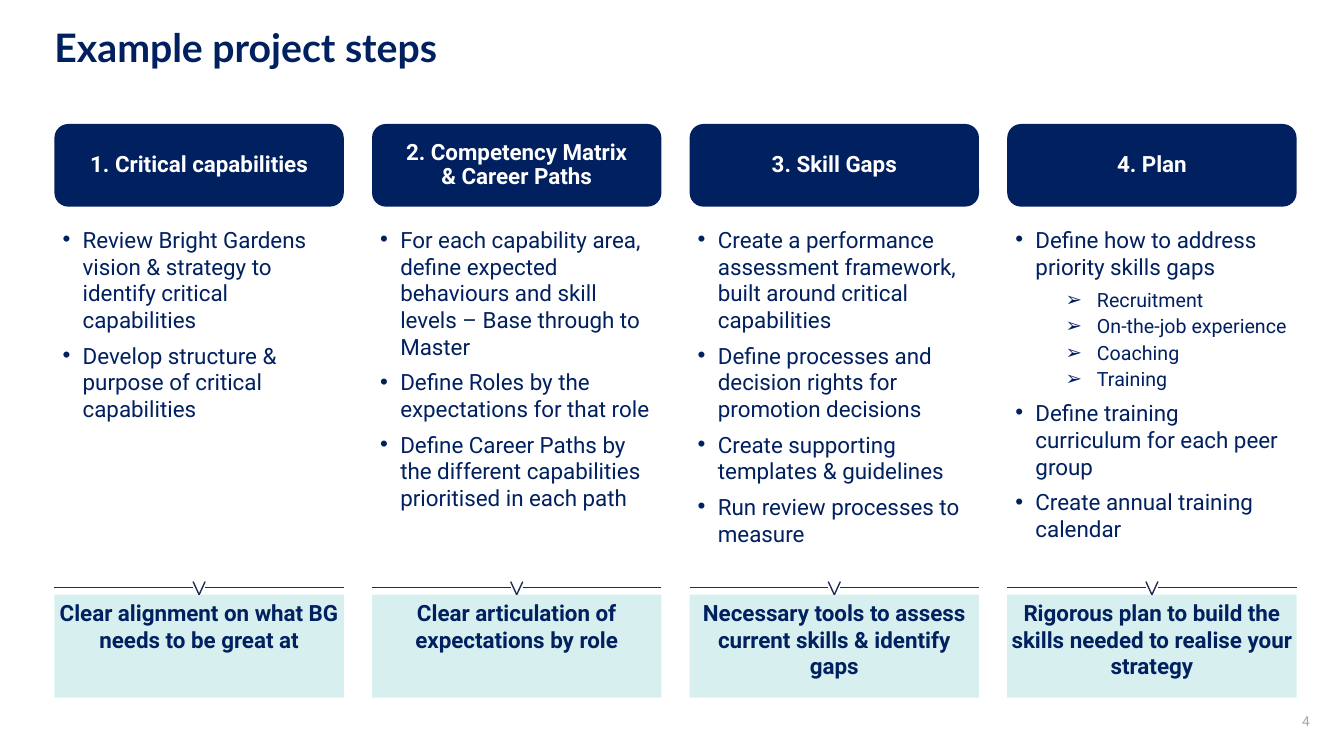
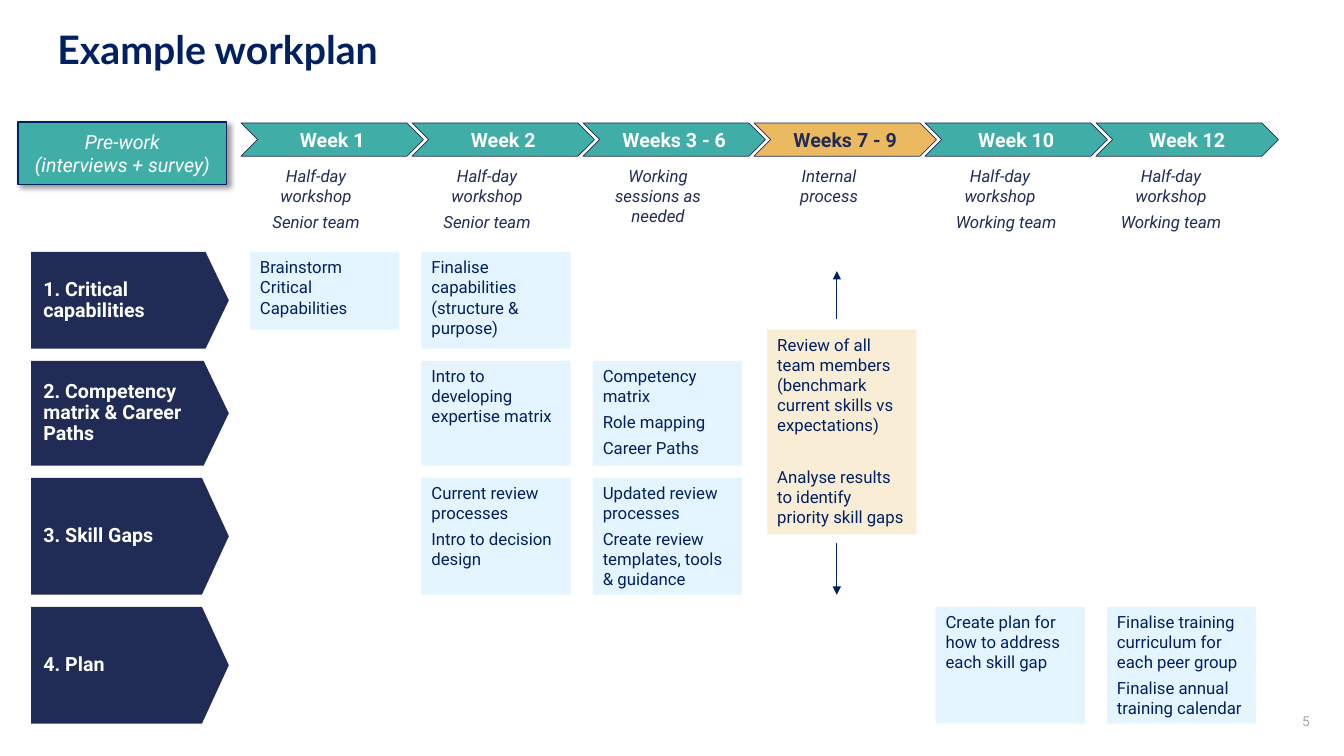
from dataclasses import dataclass
from typing import Any

from lxml.etree import SubElement
from pptx import Presentation
from pptx.dml.color import RGBColor
from pptx.enum.shapes import MSO_CONNECTOR, MSO_SHAPE
from pptx.enum.text import MSO_ANCHOR, MSO_AUTO_SIZE, PP_ALIGN
from pptx.oxml.ns import qn
from pptx.util import Inches, Pt

NAVY = RGBColor(0x00, 0x20, 0x60)
INK = RGBColor(0x21, 0x2C, 0x56)
TEAL = RGBColor(0x40, 0xAE, 0xA6)
MINT = RGBColor(0xD7, 0xF0, 0xEF)
SKY = RGBColor(0xE5, 0xF5, 0xFF)
AMBER = RGBColor(0xEB, 0xB9, 0x5F)
CREAM = RGBColor(0xFA, 0xED, 0xD6)
GREY = RGBColor(0xA6, 0xA6, 0xA6)
WHITE = RGBColor(0xFF, 0xFF, 0xFF)

COMPARISON_LAYOUT, TITLE_ONLY_LAYOUT = 4, 5

# Steps page: four equal columns
STEP_LEFT, STEP_PITCH, STEP_WIDTH = 0.54, 3.15, 2.87
RULE_TOP, NOTCH_HALF, OUTCOME_TOP = 5.83, 0.06, 5.9

# Workplan page: six week columns, four step rows
WEEK_LEFT, WEEK_PITCH, WEEK_WIDTH = 2.39, 8.48 / 5, 1.81
CARD_LEFT, CARD_PITCH, CARD_WIDTH = 2.48, 1.7, 1.48
CAPTION_WIDTH = 1.31
ROW_HEIGHTS = (0.96, 1.04, 1.16, 1.16)
ROW_TOP, ROW_GAP = 2.5, 0.12

Box = tuple[float, float, float, float]


@dataclass(frozen=True)
class TextStyle:
    size: float
    color: RGBColor
    bold: bool = False
    italic: bool = False
    name: str = "Roboto"
    align: PP_ALIGN = PP_ALIGN.LEFT
    anchor: MSO_ANCHOR = MSO_ANCHOR.MIDDLE
    line_spacing: float = 1.0
    before: float = 0
    insets: Box = (0.08, 0.08, 0.08, 0.08)


@dataclass(frozen=True)
class Bullet:
    text: str
    level: int = 0
    before: float = 6


@dataclass(frozen=True)
class Step:
    heading: str
    bullets: tuple[Bullet, ...]
    outcome: str


@dataclass(frozen=True)
class Week:
    label: str
    activity: str
    audience: str = ""
    audience_shift: float = 0
    fill: RGBColor = TEAL
    color: RGBColor = WHITE


@dataclass(frozen=True)
class Card:
    week: int
    row: int
    lines: tuple[str, ...]
    height: float | None = None


NONE = (0, 0, 0, 0)
CENTER, TOP = PP_ALIGN.CENTER, MSO_ANCHOR.TOP
TITLE = TextStyle(28, NAVY, bold=True, name="Lato", line_spacing=0.9, insets=NONE)
PAGE_NUMBER = TextStyle(9.8, GREY, align=PP_ALIGN.RIGHT, insets=(0.1, 0.05, 0.1, 0.05))
HEADING = TextStyle(16, WHITE, bold=True, align=CENTER, line_spacing=0.9, insets=NONE)
LIST = TextStyle(16, NAVY, anchor=TOP)
OUTCOME = TextStyle(16, NAVY, bold=True, align=CENTER, anchor=TOP, before=6,
                    insets=(0.04, 0.04, 0.04, 0.04))
CAPTION = TextStyle(12, INK, italic=True, align=CENTER)
ACTIVITY = TextStyle(12, INK, italic=True, align=CENTER, anchor=TOP)
ROW_LABEL = TextStyle(14, WHITE, bold=True, line_spacing=0.9, insets=(0.12, 0, 0, 0))
CARD = TextStyle(12, NAVY, anchor=TOP, before=4, insets=(0.1, 0.05, 0.1, 0.05))
PRE_WORK = TextStyle(14, WHITE, italic=True, align=CENTER, insets=(0.1, 0.05, 0.1, 0.05))

STEPS = (
    Step("1. Critical capabilities", (
        Bullet("Review Bright Gardens vision & strategy to identify critical capabilities"),
        Bullet("Develop structure & purpose of critical capabilities"),
    ), "Clear alignment on what BG needs to be great at"),
    Step("2. Competency Matrix\n& Career Paths", (
        Bullet("For each capability area, define expected behaviours and skill levels "
               "– Base through to Master"),
        Bullet("Define Roles by the expectations for that role"),
        Bullet("Define Career Paths by the different capabilities prioritised in each path"),
    ), "Clear articulation of expectations by role"),
    Step("3. Skill Gaps", (
        Bullet("Create a performance assessment framework, built around critical capabilities"),
        Bullet("Define processes and decision rights for promotion decisions"),
        Bullet("Create supporting templates & guidelines"),
        Bullet("Run review processes to measure"),
    ), "Necessary tools to assess current skills & identify gaps"),
    Step("4. Plan", (
        Bullet("Define how to address priority skills gaps"),
        Bullet("Recruitment", 1),
        Bullet("On-the-job experience", 1, 2),
        Bullet("Coaching", 1, 2),
        Bullet("Training", 1, 2),
        Bullet("Define training curriculum for each peer group"),
        Bullet("Create annual training calendar"),
    ), "Rigorous plan to build the skills needed to realise your strategy"),
)
WEEKS = (
    Week("Week 1", "Half-day workshop", "Senior team"),
    Week("Week 2", "Half-day workshop", "Senior team"),
    Week("Weeks 3 - 6", "Working sessions as needed"),
    Week("Weeks 7 - 9", "Internal process", fill=AMBER, color=INK),
    Week("Week 10", "Half-day workshop", "Working team", 0.06),
    Week("Week 12", "Half-day workshop", "Working team"),
)
ROW_LABELS = ("1. Critical capabilities", "2. Competency matrix & Career Paths",
              "3. Skill Gaps", "4. Plan")
CARDS = (
    Card(0, 0, ("Brainstorm Critical Capabilities",), 0.77),
    Card(1, 0, ("Finalise capabilities (structure & purpose)",)),
    Card(1, 1, ("Intro to developing expertise matrix",)),
    Card(1, 2, ("Current review processes", "Intro to decision design")),
    Card(2, 1, ("Competency matrix", "Role mapping", "Career Paths")),
    Card(2, 2, ("Updated review processes", "Create review templates, tools & guidance")),
    Card(4, 3, ("Create plan for how to address each skill gap",)),
    Card(5, 3, ("Finalise training curriculum for each peer group",
                "Finalise annual training calendar")),
)
REVIEW = ("Review of all team members (benchmark current skills vs expectations)",
          "Analyse results to identify priority skill gaps")


def set_all(target: Any, values: dict[str, Any]) -> None:
    for name, value in values.items():
        setattr(target, name, value)


def place(shape: Any, box: Box) -> None:
    set_all(shape, dict(zip(("left", "top", "width", "height"), map(Inches, box))))


def write(shape: Any, lines: tuple[str, ...], style: TextStyle) -> None:
    frame = shape.text_frame
    sides = ("margin_left", "margin_top", "margin_right", "margin_bottom")
    set_all(frame, {"word_wrap": True, "auto_size": MSO_AUTO_SIZE.NONE,
                    "vertical_anchor": style.anchor,
                    **dict(zip(sides, map(Inches, style.insets)))})
    for index, line in enumerate(lines):
        para = frame.add_paragraph() if index else frame.paragraphs[0]
        para.text = line
        set_all(para, {"alignment": style.align, "line_spacing": style.line_spacing,
                       "space_before": Pt(style.before), "space_after": Pt(0)})
        for span in para.runs:
            set_all(span.font, {"size": Pt(style.size), "bold": style.bold,
                                "italic": style.italic, "name": style.name})
            span.font.color.rgb = style.color


def add_box(shapes: Any, kind: MSO_SHAPE, box: Box, fill: RGBColor,
            lines: tuple[str, ...], style: TextStyle,
            outline: RGBColor | None = None, weight: float = 1) -> Any:
    shape = shapes.add_shape(kind, *map(Inches, box))
    shape.fill.solid()
    shape.fill.fore_color.rgb = fill
    if outline is None:
        shape.line.fill.background()
    else:
        shape.line.color.rgb = outline
        shape.line.width = Pt(weight)
    shape.shadow.inherit = False
    write(shape, lines, style)
    return shape


def add_label(shapes: Any, box: Box, text: str, style: TextStyle) -> None:
    write(shapes.add_textbox(*map(Inches, box)), (text,), style)


def add_line(shapes: Any, ends: Box, color: RGBColor, weight: float,
             arrow: bool = False) -> None:
    line = shapes.add_connector(MSO_CONNECTOR.STRAIGHT, *map(Inches, ends))
    line.line.color.rgb = color
    line.line.width = Pt(weight)
    properties = line._element.spPr
    SubElement(properties, qn("a:effectLst"))
    if arrow:
        SubElement(properties.find(qn("a:ln")), qn("a:tailEnd"), type="triangle")


def add_drop_shadow(shape: Any) -> None:
    effects = shape._element.spPr.find(qn("a:effectLst"))
    shadow = SubElement(effects, qn("a:outerShdw"), blurRad=str(Pt(4)), dist=str(Pt(3)),
                        dir=str(45 * 60000), algn="tl", rotWithShape="0")
    color = SubElement(shadow, qn("a:srgbClr"), val="000000")
    SubElement(color, qn("a:alpha"), val="40000")


def add_page(deck: Any, layout: int, title: str, corner: tuple[float, float],
             number: int) -> Any:
    page = deck.slides.add_slide(deck.slide_layouts[layout])
    place(page.shapes.title, (*corner, 10.07, 0.59))
    write(page.shapes.title, (title,), TITLE)
    add_label(page.shapes, (10.65, 6.95, 2.44, 0.4), str(number), PAGE_NUMBER)
    return page


def write_bullets(body: Any, bullets: tuple[Bullet, ...]) -> None:
    write(body, tuple(bullet.text for bullet in bullets), LIST)
    for para, bullet in zip(body.text_frame.paragraphs, bullets):
        margin, hanging, size, mark = ((0.2, 0.2, 16, "•"), (0.81, 0.31, 14, "➢"))[bullet.level]
        set_all(para, {"level": bullet.level, "space_before": Pt(bullet.before)})
        para.runs[0].font.size = Pt(size)
        properties = para._p.get_or_add_pPr()
        properties.set("marL", str(Inches(margin)))
        properties.set("indent", str(-Inches(hanging)))
        SubElement(properties, qn("a:buChar"), char=mark)


def add_notched_rule(shapes: Any, left: float) -> None:
    middle, right = left + STEP_WIDTH / 2, left + STEP_WIDTH
    notch_left, notch_right = middle - NOTCH_HALF, middle + NOTCH_HALF
    notch_top = RULE_TOP - NOTCH_HALF
    for ends in ((left, RULE_TOP, notch_left, RULE_TOP),
                 (notch_right, RULE_TOP, right, RULE_TOP),
                 (notch_left, notch_top, middle, OUTCOME_TOP),
                 (middle, OUTCOME_TOP, notch_right, notch_top)):
        add_line(shapes, ends, INK, 1)


def build_steps(deck: Any) -> None:
    page = add_page(deck, COMPARISON_LAYOUT, "Example project steps", (0.54, 0.2), 4)
    bodies = [holder for holder in page.placeholders if holder.placeholder_format.idx]
    for column, (step, body) in enumerate(zip(STEPS, bodies)):
        left = STEP_LEFT + column * STEP_PITCH
        add_box(page.shapes, MSO_SHAPE.ROUNDED_RECTANGLE, (left, 1.23, STEP_WIDTH, 0.82),
                NAVY, (step.heading,), HEADING)
        place(body, (left, 2.16, STEP_WIDTH, 3.5))
        write_bullets(body, step.bullets)
        add_box(page.shapes, MSO_SHAPE.RECTANGLE, (left, OUTCOME_TOP, STEP_WIDTH, 1.02),
                MINT, (step.outcome,), OUTCOME)
        add_notched_rule(page.shapes, left)


def row_top(row: int) -> float:
    return ROW_TOP + sum(ROW_HEIGHTS[:row]) + row * ROW_GAP


def add_week(shapes: Any, column: int, week: Week) -> None:
    heading = TextStyle(14, week.color, bold=True, align=CENTER)
    add_box(shapes, MSO_SHAPE.CHEVRON,
            (WEEK_LEFT + column * WEEK_PITCH, 1.22, WEEK_WIDTH, 0.33),
            week.fill, (week.label,), heading, INK, 0.5)
    left = CARD_LEFT + column * WEEK_PITCH
    add_label(shapes, (left, 1.56, CAPTION_WIDTH, 0.57), week.activity, ACTIVITY)
    if week.audience:
        add_label(shapes, (left + week.audience_shift, 2.04, CAPTION_WIDTH, 0.33),
                  week.audience, CAPTION)


def add_review(page: Any) -> None:
    shapes = page.shapes.add_group_shape().shapes
    review = add_box(shapes, MSO_SHAPE.RECTANGLE, (7.61, 3.27, CARD_WIDTH, 2.03),
                     CREAM, REVIEW, CARD)
    review.text_frame.paragraphs[1].space_before = Pt(22.5)
    for start, end in ((3.16, 2.69), (5.39, 5.9)):
        add_line(shapes, (8.3, start, 8.3, end), NAVY, 0.5, arrow=True)


def build_workplan(deck: Any) -> None:
    page = add_page(deck, TITLE_ONLY_LAYOUT, "Example workplan", (0.57, 0.22), 5)
    for column, week in enumerate(WEEKS):
        add_week(page.shapes, column, week)
    for row, (label, height) in enumerate(zip(ROW_LABELS, ROW_HEIGHTS)):
        pentagon = add_box(page.shapes, MSO_SHAPE.PENTAGON, (0.31, row_top(row), 1.96, height),
                           INK, (label,), ROW_LABEL)
        pentagon.adjustments[0] = 0.24 if row < 2 else 0.23
    for card in CARDS:
        box = (CARD_LEFT + card.week * CARD_PITCH, row_top(card.row), CARD_WIDTH,
               card.height or ROW_HEIGHTS[card.row])
        add_box(page.shapes, MSO_SHAPE.RECTANGLE, box, SKY, card.lines, CARD)
    pre_work = add_box(page.shapes, MSO_SHAPE.RECTANGLE, (0.18, 1.21, 2.07, 0.62), TEAL,
                       ("Pre-work\n(interviews + survey)",), PRE_WORK, NAVY)
    add_drop_shadow(pre_work)
    add_review(page)


def main() -> None:
    deck = Presentation()
    set_all(deck, {"slide_width": Inches(13.33), "slide_height": Inches(7.5)})
    build_steps(deck)
    build_workplan(deck)
    deck.save("out.pptx")


if __name__ == "__main__":
    main()
